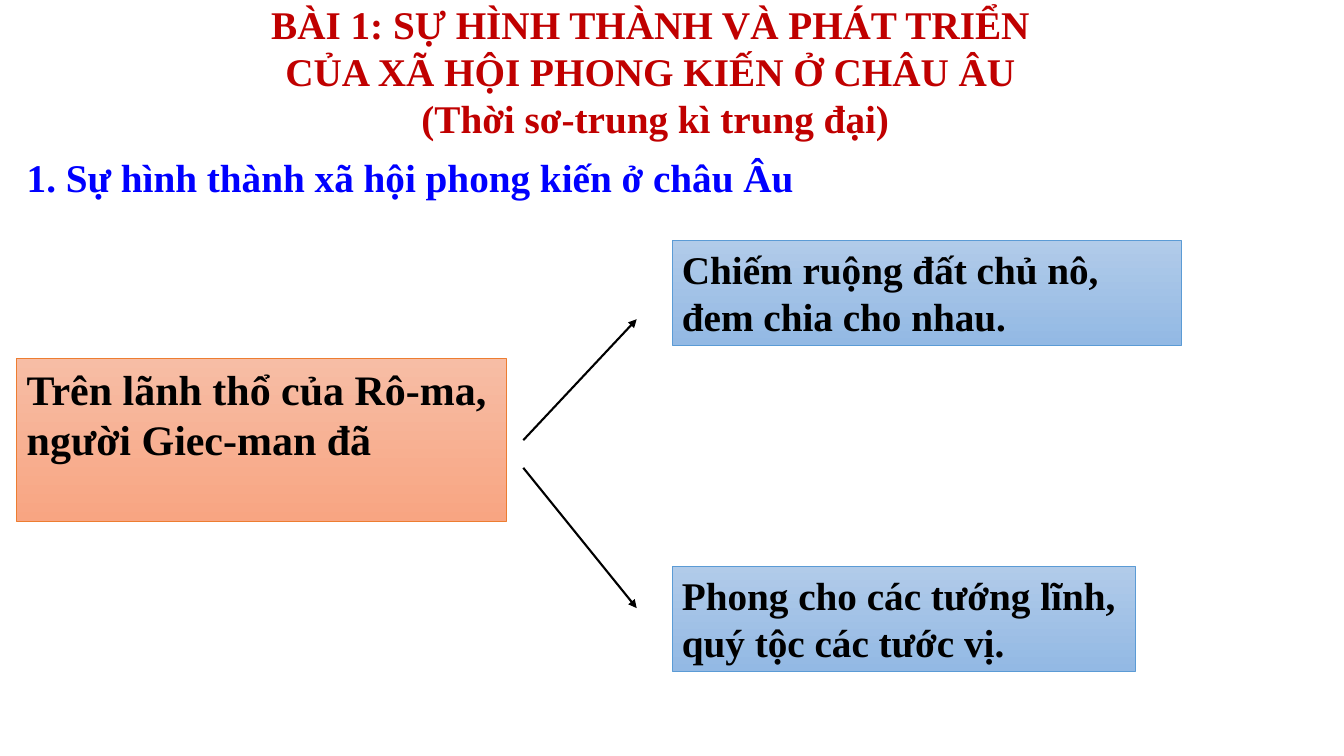
from lxml import etree
from pptx import Presentation
from pptx import util as u
from pptx.dml.color import RGBColor
from pptx.enum import shapes, text
from pptx.oxml import ns

RED = RGBColor(0xC0, 0x00, 0x00)
BLUE = RGBColor(0x00, 0x00, 0xFF)
BLACK = RGBColor(0x00, 0x00, 0x00)
ORANGE = (RGBColor(0xF7, 0xBD, 0xA5), RGBColor(0xF8, 0xA5, 0x82), RGBColor(0xED, 0x7D, 0x31))
SKY = (RGBColor(0xB1, 0xCB, 0xE9), RGBColor(0x93, 0xB9, 0xE4), RGBColor(0x5B, 0x9B, 0xD5))
FONT = "Times New Roman"
WIDE, HIGH = u.Inches(13.33), u.Inches(7.5)
COLS, ROWS = 80, 45


def grid(x, y):
    """Turn columns and rows into slide lengths."""
    return round(x * WIDE / COLS), round(y * HIGH / ROWS)


def write(shape, words, size, color, align, anchor=text.MSO_ANCHOR.TOP):
    frame = shape.text_frame
    frame.text = words
    frame.word_wrap = True
    frame.auto_size = text.MSO_AUTO_SIZE.NONE
    frame.vertical_anchor = anchor
    for para in frame.paragraphs:
        para.alignment = align
        para.line_spacing = 1.0
        for run in para.runs:
            font = run.font
            font.name, font.size, font.bold = FONT, u.Pt(size), True
            font.color.rgb = color


def add_title(slide, x, y, w, h):
    title = slide.shapes.title
    title.left, title.top = grid(x, y)
    title.width, title.height = grid(w, h)
    write(title, "BÀI 1: SỰ HÌNH THÀNH VÀ PHÁT TRIỂN \vCỦA XÃ HỘI PHONG KIẾN Ở CHÂU ÂU \v"
          "(Thời sơ-trung kì trung đại)", 28, RED, text.PP_ALIGN.CENTER)


def add_heading(slide, x, y, w, h):
    box = slide.shapes.add_textbox(*grid(x, y), *grid(w, h))
    write(box, "1. Sự hình thành xã hội phong kiến ở châu Âu", 28, BLUE,
          text.PP_ALIGN.JUSTIFY, text.MSO_ANCHOR.MIDDLE)


def add_card(slide, x, y, w, h, words, size, tones):
    card = slide.shapes.add_shape(shapes.MSO_SHAPE.RECTANGLE, *grid(x, y), *grid(w, h))
    card.shadow.inherit = False
    card.fill.gradient()
    card.fill.gradient_angle = 270
    for stop, tone, place in zip(card.fill.gradient_stops, tones, (0, 1)):
        stop.color.rgb = tone
        stop.position = place
    card.line.color.rgb = tones[2]
    card.line.width = u.Pt(0.5)
    write(card, words, size, BLACK, text.PP_ALIGN.LEFT)


def add_arrow(slide, x1, y1, x2, y2):
    arrow = slide.shapes.add_connector(
        shapes.MSO_CONNECTOR.STRAIGHT, *grid(x1, y1), *grid(x2, y2))
    arrow.line.color.rgb = BLACK
    arrow.line.width = u.Pt(1.5)
    etree.SubElement(arrow.line._get_or_add_ln(), ns.qn("a:tailEnd"), type="triangle")
    etree.SubElement(arrow._element.spPr, ns.qn("a:effectLst"))


def add_tree(slide, x, y, h):
    """Draw the cause card and its two branches, spread over height h."""
    card_h = 6.25
    add_card(slide, x, y + 7.05, 29.15, 9.7,
             "Trên lãnh thổ của Rô-ma, người Giec-man đã", 30, ORANGE)
    branches = (
        (y, 30.3, "Chiếm ruộng đất chủ nô, đem chia cho nhau.", 11.9, 4.7),
        (y + h - card_h, 27.6, "Phong cho các tướng lĩnh, quý tộc các tước vị.", 13.55, 21.9),
    )
    for top, w, words, start, end in branches:
        add_card(slide, x + 39, top, w, card_h, words, 28, SKY)
        add_arrow(slide, x + 30.15, y + start, x + 36.9, y + end)


def main():
    deck = Presentation()
    deck.slide_width, deck.slide_height = WIDE, HIGH
    slide = deck.slides.add_slide(deck.slide_layouts.get_by_name("Title Only"))
    add_title(slide, -1, -0.3, 80, 9.1)
    add_heading(slide, 1, 8.8, 48.25, 3.4)
    add_tree(slide, 1, 14.3, 25.65)
    deck.save("out.pptx")


if __name__ == "__main__":
    main()
